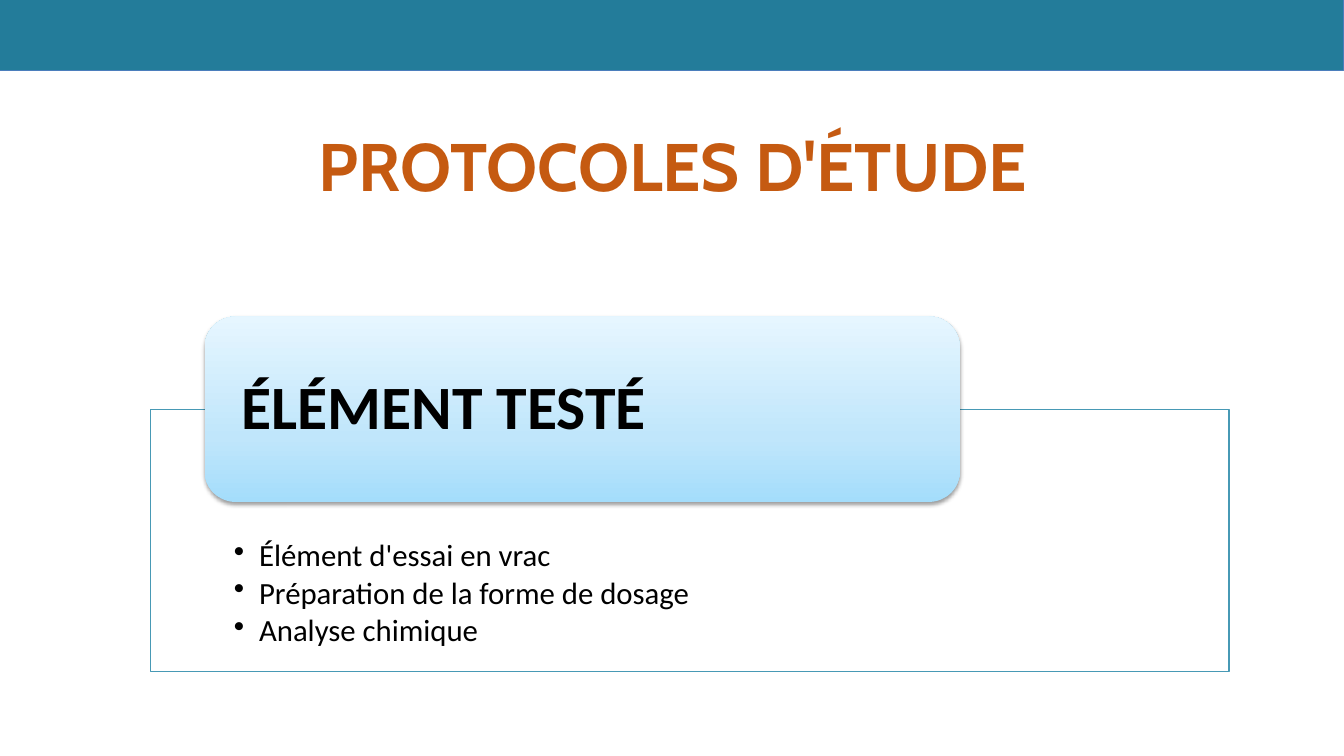
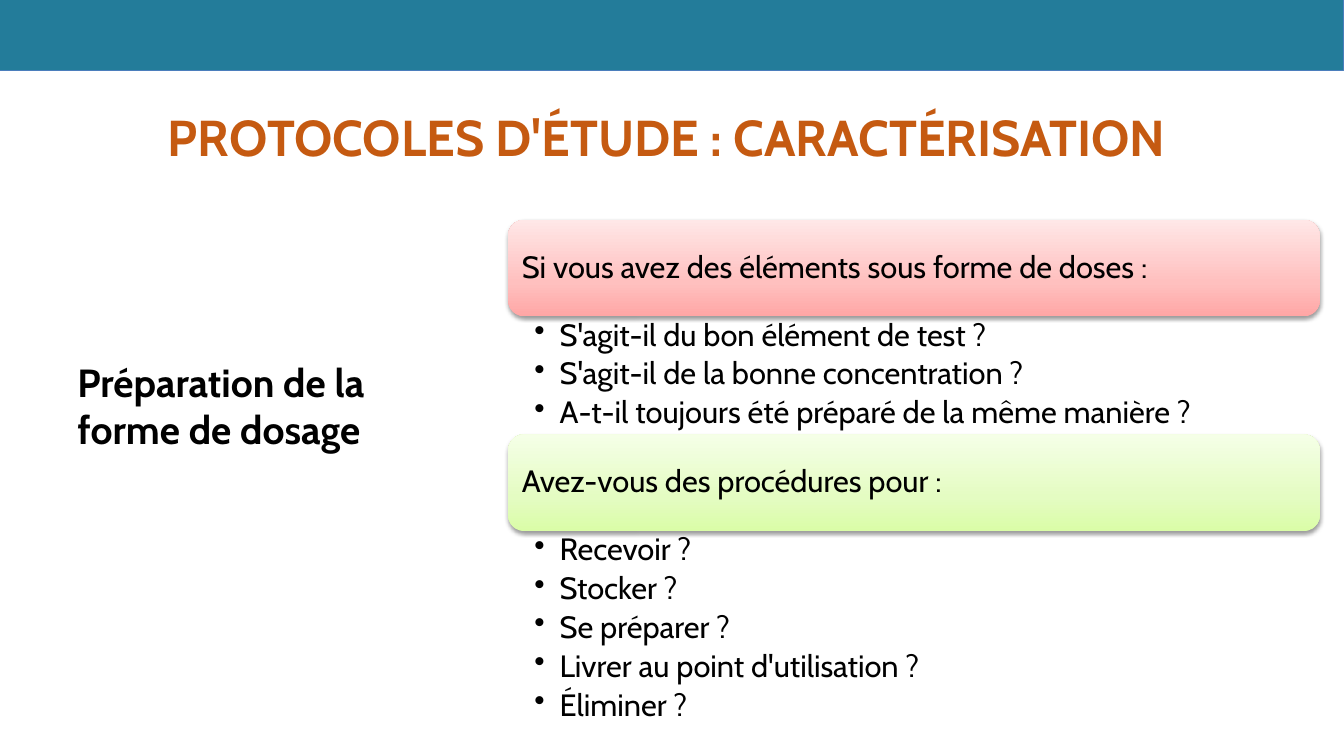
"""Two slides on study protocols."""
from dataclasses import dataclass

from pptx import Presentation
from pptx import oxml
from pptx import util as u
from pptx.dml.color import RGBColor
from pptx.enum import shapes, text
from pptx.oxml import ns


@dataclass(frozen=True)
class Theme:
    """Colours, fonts and type sizes of the deck."""
    band: str = "237C9A"
    edge: str = "4B7EBC"
    frame: str = "4799B5"
    title: str = "C55A11"
    ink: str = "000000"
    paper: str = "FFFFFF"
    blue: tuple = ("A4DDFB", "C0E6FB", "E6F6FF")
    red: tuple = ("FFA6A5", "FFC0BF", "FFE7E7")
    green: tuple = ("DAFDA7", "E4FCC2", "F5FFE7")
    head: str = "Cabin"
    body: str = "Calibri"
    big: int = 48
    card: int = 44
    mid: int = 36
    side: int = 28
    base: int = 22


T = Theme()
PAD = (0.1, 0.05, 0.1, 0)


def put(item, **vals):
    """Set each value as an attribute of the item."""
    for key, val in vals.items():
        setattr(item, key, val)


def place(box):
    """Turn a box in inches into lengths."""
    return [u.Inches(n) for n in box]


def dot(para):
    """Give a paragraph a hanging round bullet."""
    props = para._p.get_or_add_pPr()
    props.set("marL", str(u.Inches(0.25)))
    props.set("indent", str(-u.Inches(0.25)))
    props.append(oxml.parse_xml(f'<a:buChar {ns.nsdecls("a")} char="•"/>'))


def write(shape, lines, size, name=T.head, bold=False, color=T.ink, pad=PAD,
          anchor=text.MSO_ANCHOR.TOP, align=text.PP_ALIGN.LEFT,
          lead=1.0, after=0, list_=False):
    """Fill a shape with evenly formatted paragraphs."""
    frame = shape.text_frame
    sides = ("margin_left", "margin_top", "margin_right", "margin_bottom")
    put(frame, word_wrap=True, auto_size=text.MSO_AUTO_SIZE.NONE,
        vertical_anchor=anchor, **dict(zip(sides, place(pad))))
    for num, line in enumerate(lines):
        para = frame.add_paragraph() if num else frame.paragraphs[0]
        if list_:
            dot(para)
        put(para, text=line, alignment=align, line_spacing=lead,
            space_before=u.Pt(0), space_after=u.Pt(after))
        put(para.font, size=u.Pt(size), name=name, bold=bold)
        para.font.color.rgb = RGBColor.from_string(color)


def panel(slide, box, fill, line):
    """Draw a flat outlined rectangle."""
    shape = slide.shapes.add_shape(shapes.MSO_SHAPE.RECTANGLE, *place(box))
    shape.shadow.inherit = False
    shape.fill.solid()
    shape.fill.fore_color.rgb = RGBColor.from_string(fill)
    shape.line.color.rgb = RGBColor.from_string(line)
    shape.line.width = u.Pt(0.75)
    return shape


def card(slide, box, tints, line, **style):
    """Draw a shaded rounded card with one line of text."""
    shape = slide.shapes.add_shape(
        shapes.MSO_SHAPE.ROUNDED_RECTANGLE, *place(box))
    shape.shadow.inherit = False
    shape.line.fill.background()
    stops = "".join(
        f'<a:gs pos="{pos}000"><a:srgbClr val="{tint}"/></a:gs>'
        for pos, tint in zip((0, 35, 100), tints))
    props = shape.element.spPr
    props.insert(2, oxml.parse_xml(
        f'<a:gradFill {ns.nsdecls("a")} rotWithShape="1">'
        f'<a:gsLst>{stops}</a:gsLst><a:lin ang="16200000"/></a:gradFill>'))
    props.find(ns.qn("a:effectLst")).append(oxml.parse_xml(
        f'<a:outerShdw {ns.nsdecls("a")} blurRad="{u.Pt(3.1)}" '
        f'dist="{u.Pt(1.6)}" dir="5400000" rotWithShape="0">'
        f'<a:srgbClr val="{T.ink}"><a:alpha val="38000"/></a:srgbClr>'
        '</a:outerShdw>'))
    write(shape, [line], anchor=text.MSO_ANCHOR.MIDDLE, lead=0.9, **style)


def note(slide, box, lines, size, **style):
    """Add a plain text box."""
    write(slide.shapes.add_textbox(*place(box)), lines, size, **style)


def start(deck, title, top, size):
    """Add a slide with its title."""
    slide = deck.slides.add_slide(deck.slide_layouts[5])
    head = slide.shapes.title
    put(head, **dict(zip(("left", "top", "width", "height"),
                         place((0.67, top, 12, 0.65)))))
    write(head, [title], size, bold=True, color=T.title,
          align=text.PP_ALIGN.CENTER)
    return slide


def share(deck, slide):
    """Put the top band on the slide master."""
    band = panel(slide, (0, 0, 13.33, 0.7), T.band, T.edge).element
    band.nvSpPr.cNvPr.set("id", "99")
    deck.slide_master.shapes.element.insert(2, band)


def item(deck):
    """Build the slide on the test item."""
    slide = start(deck, "PROTOCOLES D'ÉTUDE", 1.18, T.big)
    share(deck, slide)
    frame = panel(slide, (1.49, 4.06, 10.7, 2.6), T.paper, T.frame)
    write(frame, ["Élément d'essai en vrac",
                  "Préparation de la forme de dosage",
                  "Analyse chimique"],
          T.base, name=T.body, pad=(0.83, 1.3, 0.83, 0.17),
          lead=0.9, after=3, list_=True)
    card(slide, (2.03, 3.14, 7.49, 1.84), T.blue, "ÉLÉMENT TESTÉ",
         size=T.card, name=T.body, bold=True, pad=(0.28, 0, 0.28, 0))


def dosage(deck):
    """Build the slide on the dosage form."""
    slide = start(deck, "PROTOCOLES D'ÉTUDE : CARACTÉRISATION ", 1, T.mid)
    note(slide, (0.67, 3.51, 3.57, 0.97),
         ["Préparation de la forme de dosage"], T.side, bold=True)
    groups = (
        (T.red, "Si vous avez des éléments sous forme de doses :", 1.17,
         ["S'agit-il du bon élément de test ?",
          "S'agit-il de la bonne concentration ?",
          "A-t-il toujours été préparé de la même manière ?"]),
        (T.green, "Avez-vous des procédures pour :", 1.97,
         ["Recevoir ?", "Stocker ?", "Se préparer ?",
          "Livrer au point d'utilisation ?", "Éliminer ?"]),
    )
    left, top, wide, high = 5.04, 2.18, 8.05, 0.96
    for tints, line, deep, lines in groups:
        card(slide, (left, top, wide, high), tints, line,
             size=T.base, pad=(0.09,) * 4)
        top += high
        note(slide, (left, top, wide, deep), lines, T.base,
             pad=(0.26, 0.03, 0.17, 0.03), lead=0.9, after=4, list_=True)
        top += deep


def main():
    """Build and save the deck."""
    deck = Presentation()
    put(deck, slide_width=u.Inches(13.33), slide_height=u.Inches(7.5))
    item(deck)
    dosage(deck)
    deck.save("out.pptx")


if __name__ == "__main__":
    main()
